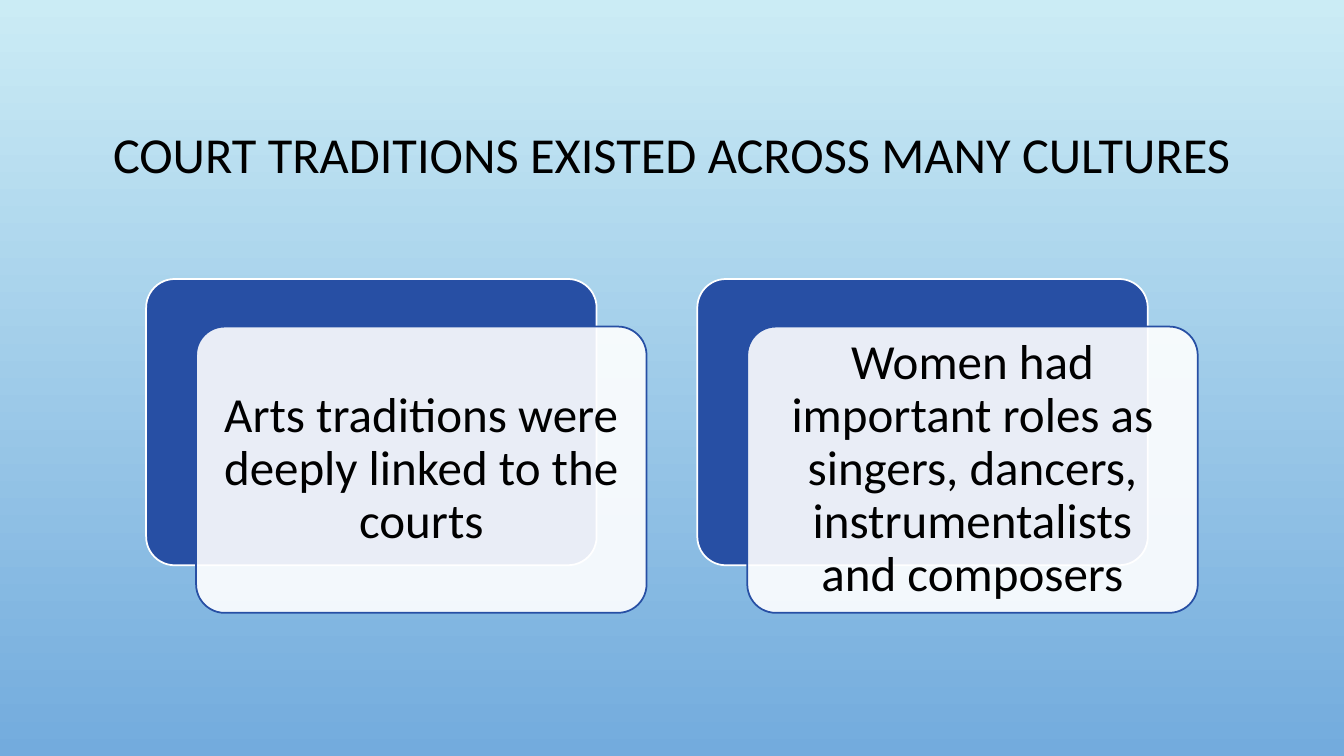
"""Build a slide on court traditions with two layered cards."""
from dataclasses import dataclass

from lxml.etree import SubElement
from pptx import Presentation
from pptx.dml.color import RGBColor
from pptx.enum.shapes import MSO_SHAPE
from pptx.enum.text import MSO_ANCHOR, MSO_AUTO_SIZE, PP_ALIGN
from pptx.oxml.ns import qn
from pptx.shapes.autoshape import Shape
from pptx.slide import Slide
from pptx.util import Pt

SKY_TOP = RGBColor(0xCB, 0xEC, 0xF5)
SKY_BOTTOM = RGBColor(0x73, 0xAB, 0xDD)
ROYAL_BLUE = RGBColor(0x27, 0x4F, 0xA4)
WHITE = RGBColor(0xFF, 0xFF, 0xFF)
BLACK = RGBColor(0x00, 0x00, 0x00)

CARD_LEFT, CARD_TOP, CARD_STEP = 104.4, 199.3, 393.7
CARD_WIDTH, CARD_HEIGHT = 321.8, 204.5
FRONT_SHIFT_X, FRONT_SHIFT_Y = 35.7, 34
TEXT_INSET = 6
TEXT_FRAME = {
    "word_wrap": True,
    "auto_size": MSO_AUTO_SIZE.NONE,
    "vertical_anchor": MSO_ANCHOR.MIDDLE,
}
CARD_MARGINS = {
    f"margin_{side}": Pt(10.8) for side in ("left", "top", "right", "bottom")
}
PARAGRAPH = {"alignment": PP_ALIGN.CENTER, "line_spacing": 0.9, "space_before": Pt(0)}


@dataclass(frozen=True)
class Area:
    left: float
    top: float
    width: float
    height: float

    def lengths(self) -> tuple[Pt, Pt, Pt, Pt]:
        return Pt(self.left), Pt(self.top), Pt(self.width), Pt(self.height)


@dataclass(frozen=True)
class Panel:
    shift_x: float
    shift_y: float
    fill: RGBColor
    line: RGBColor
    opacity: int


PANELS = (
    Panel(0, 0, ROYAL_BLUE, WHITE, 100),
    Panel(FRONT_SHIFT_X, FRONT_SHIFT_Y, WHITE, ROYAL_BLUE, 90),
)
CARD_TEXTS = (
    "Arts traditions were deeply linked to the courts",
    "Women had important roles as singers, dancers, instrumentalists and composers",
)


def apply(target: object, values: dict[str, object]) -> None:
    for name, value in values.items():
        setattr(target, name, value)


def write(box: Shape, text: str, size: float) -> None:
    apply(box.text_frame, TEXT_FRAME)
    para = box.text_frame.paragraphs[0]
    apply(para, PARAGRAPH)
    span = para.add_run()
    span.text = text
    apply(span.font, {"name": "Calibri", "size": Pt(size), "bold": False})
    span.font.color.rgb = BLACK


def draw_panel(page: Slide, panel: Panel, left: float) -> None:
    area = Area(left + panel.shift_x, CARD_TOP + panel.shift_y, CARD_WIDTH, CARD_HEIGHT)
    box = page.shapes.add_shape(MSO_SHAPE.ROUNDED_RECTANGLE, *area.lengths())
    box.adjustments[0] = 0.1
    box.shadow.inherit = False
    box.fill.solid()
    box.fill.fore_color.rgb = panel.fill
    box.line.color.rgb = panel.line
    box.line.width = Pt(1.25)
    if panel.opacity < 100:
        color = box.fill._xPr.find(qn("a:solidFill"))[0]
        SubElement(color, qn("a:alpha")).set("val", str(panel.opacity * 1000))


def draw_card(page: Slide, left: float, text: str) -> None:
    for panel in PANELS:
        draw_panel(page, panel, left)
    area = Area(
        left + FRONT_SHIFT_X + TEXT_INSET,
        CARD_TOP + FRONT_SHIFT_Y + TEXT_INSET,
        CARD_WIDTH - 2 * TEXT_INSET,
        CARD_HEIGHT - 2 * TEXT_INSET,
    )
    box = page.shapes.add_textbox(*area.lengths())
    apply(box.text_frame, CARD_MARGINS)
    write(box, text, 35)


def paint_background(page: Slide) -> None:
    fill = page.background.fill
    fill.gradient()
    fill.gradient_angle = 270
    for stop, color, position in zip(fill.gradient_stops, (SKY_TOP, SKY_BOTTOM), (0, 1)):
        stop.color.rgb = color
        stop.position = position


def main() -> None:
    deck = Presentation()
    apply(deck, {"slide_width": Pt(960), "slide_height": Pt(540)})
    page = deck.slides.add_slide(deck.slide_layouts.get_by_name("Title Only"))
    paint_background(page)
    title = page.shapes.title
    title_area = Area(72, 49, 816, 126)
    apply(title, dict(zip(("left", "top", "width", "height"), title_area.lengths())))
    write(title, "COURT TRADITIONS EXISTED ACROSS MANY CULTURES", 36)
    for index, text in enumerate(CARD_TEXTS):
        draw_card(page, CARD_LEFT + index * CARD_STEP, text)
    deck.save("out.pptx")


if __name__ == "__main__":
    main()
